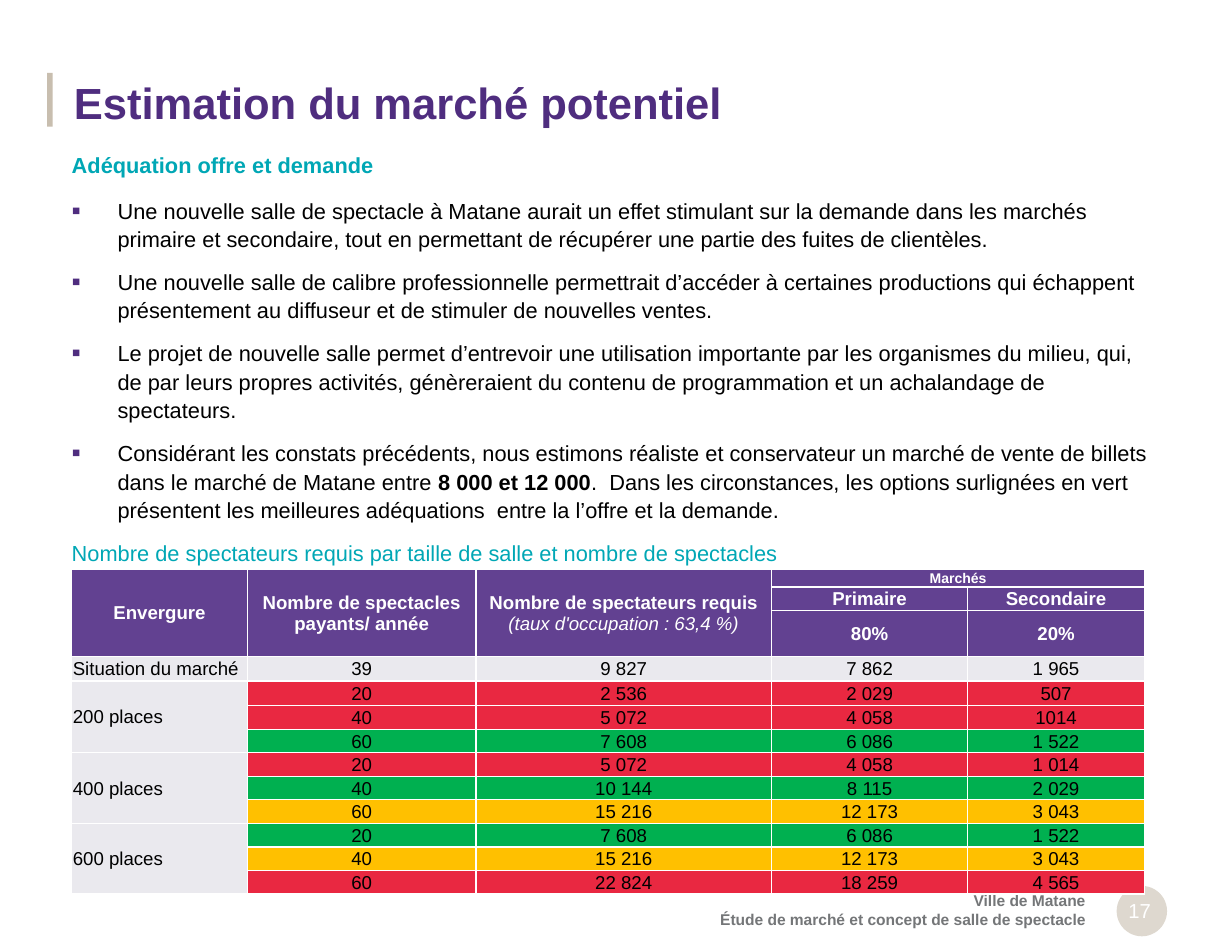
import pptx
import pptx.dml.color
import pptx.enum.shapes
import pptx.enum.text
import pptx.oxml
import pptx.oxml.ns
import pptx.util

Inches = pptx.util.Inches
Pt = pptx.util.Pt
RGBColor = pptx.dml.color.RGBColor
Align = pptx.enum.text.PP_ALIGN
Anchor = pptx.enum.text.MSO_ANCHOR
Shape = pptx.enum.shapes.MSO_SHAPE

WHITE = RGBColor(0xFF, 0xFF, 0xFF)
BLACK = RGBColor(0, 0, 0)
PURPLE = RGBColor(0x4F, 0x2D, 0x7F)
HEADER_PURPLE = RGBColor(0x62, 0x41, 0x91)
TEAL = RGBColor(0x00, 0xA7, 0xB5)
TAUPE = RGBColor(0xC8, 0xBE, 0xAF)
SAND = RGBColor(0xDE, 0xD8, 0xCF)
GREY = RGBColor(0x74, 0x76, 0x78)
PALE = RGBColor(0xEA, 0xE9, 0xEE)
RED = RGBColor(0xE9, 0x28, 0x41)
GREEN = RGBColor(0x00, 0xB0, 0x50)
AMBER = RGBColor(0xFF, 0xC0, 0x00)

LINE_SPACING = 1.1
POINTS = [
    ["Une nouvelle salle de spectacle à Matane aurait un effet stimulant sur la demande dans les marchés "
     "primaire et secondaire, tout en permettant de récupérer une partie des fuites de clientèles."],
    ["Une nouvelle salle de calibre professionnelle permettrait d’accéder à certaines productions qui "
     "échappent présentement au diffuseur et de stimuler de nouvelles ventes."],
    ["Le projet de nouvelle salle permet d’entrevoir une utilisation importante par les organismes du "
     "milieu, qui, de par leurs propres activités, génèreraient du contenu de programmation et un "
     "achalandage de spectateurs."],
    ["Considérant les constats précédents, nous estimons réaliste et conservateur un marché de vente de "
     "billets dans le marché de Matane entre ",
     "8 000 et 12 000",
     ".  Dans les circonstances, les options surlignées en vert présentent les meilleures adéquations  "
     "entre la l’offre et la demande."],
]
MARKET = ["39", "9 827", "7 862", "1 965"]
VENUES = {
    "200 places": [(RED, ["20", "2 536", "2 029", "507"]),
                   (RED, ["40", "5 072", "4 058", "1014"]),
                   (GREEN, ["60", "7 608", "6 086", "1 522"])],
    "400 places": [(RED, ["20", "5 072", "4 058", "1 014"]),
                   (GREEN, ["40", "10 144", "8 115", "2 029"]),
                   (AMBER, ["60", "15 216", "12 173", "3 043"])],
    "600 places": [(GREEN, ["20", "7 608", "6 086", "1 522"]),
                   (AMBER, ["40", "15 216", "12 173", "3 043"]),
                   (RED, ["60", "22 824", "18 259", "4 565"])],
}
COLUMN_WIDTHS = [1.57, 2.04, 2.64, 1.75, 1.58]
ROW_HEIGHTS = [0.15, 0.2, 0.36] + [0.22] * 2 + [0.21] * 8


def style(paragraph, size, color, bold=None, align=Align.LEFT):
    paragraph.alignment = align
    font = paragraph.font
    font.name, font.size, font.bold = "Arial", Pt(size), bold
    font.color.rgb = color


def add_plain_shape(slide, kind, left, top, width, height, color):
    shape = slide.shapes.add_shape(kind, Inches(left), Inches(top), Inches(width), Inches(height))
    shape.shadow.inherit = False
    shape.fill.solid()
    shape.fill.fore_color.rgb = color
    shape.line.fill.background()


def add_text_frame(slide, left, top, width, height, right_margin=0):
    box = slide.shapes.add_textbox(Inches(left), Inches(top), Inches(width), Inches(height))
    frame = box.text_frame
    frame.word_wrap = True
    frame.margin_left, frame.margin_right = 0, Inches(right_margin)
    return frame


def add_heading(slide, left, top):
    add_plain_shape(slide, Shape.RECTANGLE, left, top + 0.07, 0.05, 0.48, TAUPE)
    title = add_text_frame(slide, left + 0.24, top, 9.75, 0.67).paragraphs[0]
    title.text = "Estimation du marché potentiel"
    title.line_spacing = Pt(37.4)
    style(title, 28, PURPLE, True)


def add_footer(slide, left, top):
    study = add_text_frame(slide, left, top, 4.11, 0.44).paragraphs[0]
    study.text = "Ville de Matane\vÉtude de marché et concept de salle de spectacle"
    style(study, 10, GREY, True, Align.RIGHT)
    add_plain_shape(slide, Shape.OVAL, left + 4.39, top, 0.45, 0.45, SAND)
    page_number = add_text_frame(slide, left + 4.29, top + 0.06, 0.61, 0.27).paragraphs[0]
    page_number.text = "17"
    style(page_number, 13, WHITE, align=Align.CENTER)


def add_square_bullet(paragraph):
    properties = paragraph._p.get_or_add_pPr()
    properties.set("marL", str(Inches(0.41)))
    properties.set("indent", str(-Inches(0.41)))
    namespace = pptx.oxml.ns.nsdecls("a")
    for element in (f'<a:buClr {namespace}><a:srgbClr val="{PURPLE}"/></a:buClr>',
                    f'<a:buSzPct {namespace} val="120000"/>',
                    f'<a:buFont {namespace} typeface="Arial"/>',
                    f'<a:buChar {namespace} char="▪"/>'):
        properties.append(pptx.oxml.parse_xml(element))


def add_findings(slide, left, top, width, height):
    frame = add_text_frame(slide, left, top, width, height, right_margin=0.1)
    subtitle = frame.paragraphs[0]
    subtitle.text = "Adéquation offre et demande"
    subtitle.line_spacing = LINE_SPACING
    subtitle.space_after = Pt(6.6)
    style(subtitle, 14, TEAL, True)

    caption = ["Nombre de spectateurs requis par taille de salle et nombre de spectacles"]
    for parts in POINTS + [caption]:
        paragraph = frame.add_paragraph()
        paragraph.line_spacing = LINE_SPACING
        paragraph.space_before = paragraph.space_after = Pt(4.4)
        if parts is not caption:
            add_square_bullet(paragraph)
        for index, part in enumerate(parts):
            run = paragraph.add_run()
            run.text = part
            if index == 1:
                run.font.bold = True
        style(paragraph, 14, TEAL if parts is caption else BLACK)


def outline_cell(cell):
    properties = cell._tc.get_or_add_tcPr()
    for index, side in enumerate(("lnL", "lnR", "lnT", "lnB")):
        properties.insert(index, pptx.oxml.parse_xml(
            f'<a:{side} {pptx.oxml.ns.nsdecls("a")} w="12700">'
            f'<a:solidFill><a:srgbClr val="{WHITE}"/></a:solidFill></a:{side}>'))


def fill_cell(cell, text, fill, color=BLACK, bold=False, align=Align.CENTER, size=12):
    cell.fill.solid()
    cell.fill.fore_color.rgb = fill
    cell.vertical_anchor = Anchor.MIDDLE
    cell.margin_left = cell.margin_right = cell.margin_top = Inches(0.01)
    cell.margin_bottom = 0
    cell.text = text
    for paragraph in cell.text_frame.paragraphs:
        style(paragraph, size, color, bold, align)


def add_audience_table(slide, left, top):
    table = slide.shapes.add_table(len(ROW_HEIGHTS), len(COLUMN_WIDTHS), Inches(left), Inches(top),
                                   Inches(sum(COLUMN_WIDTHS)), Inches(sum(ROW_HEIGHTS))).table
    table.first_row = table.horz_banding = False
    for column, width in zip(table.columns, COLUMN_WIDTHS):
        column.width = Inches(width)
    for row, height in zip(table.rows, ROW_HEIGHTS):
        row.height = Inches(height)

    headers = {(0, 0): "Envergure", (0, 1): "Nombre de spectacles payants/ année",
               (0, 2): "Nombre de spectateurs requis\n(taux d'occupation : 63,4 %)",
               (0, 3): "Marchés", (1, 3): "Primaire", (1, 4): "Secondaire",
               (2, 3): "80%", (2, 4): "20%"}
    for row in range(3):
        for column in range(5):
            text = headers.get((row, column), "")
            size = 9 if row == 0 and column > 2 else 12
            fill_cell(table.cell(row, column), text, HEADER_PURPLE, WHITE, True, size=size)
    occupancy = table.cell(0, 2).text_frame.paragraphs[1].font
    occupancy.bold, occupancy.italic = False, True
    for column in range(3):
        table.cell(0, column).merge(table.cell(2, column))
    table.cell(0, 3).merge(table.cell(0, 4))

    body = [("Situation du marché", PALE, MARKET)]
    for venue, options in VENUES.items():
        body += [("" if index else venue, fill, values) for index, (fill, values) in enumerate(options)]
    for row, (label, fill, values) in enumerate(body, start=3):
        fill_cell(table.cell(row, 0), label, PALE, align=Align.LEFT)
        for column, value in enumerate(values, start=1):
            fill_cell(table.cell(row, column), value, fill)
    for row in range(4, 13, 3):
        table.cell(row, 0).merge(table.cell(row + 2, 0))
    for cell in table.iter_cells():
        outline_cell(cell)


def main():
    presentation = pptx.Presentation()
    presentation.slide_width, presentation.slide_height = Inches(11), Inches(8.5)
    slide = presentation.slides.add_slide(presentation.slide_layouts[6])
    add_footer(slide, 5.58, 7.91)
    add_heading(slide, 0.42, 0.58)
    add_findings(slide, 0.64, 1.28, 9.75, 3.8)
    add_audience_table(slide, 0.64, 5.08)
    presentation.save("out.pptx")


if __name__ == "__main__":
    main()
